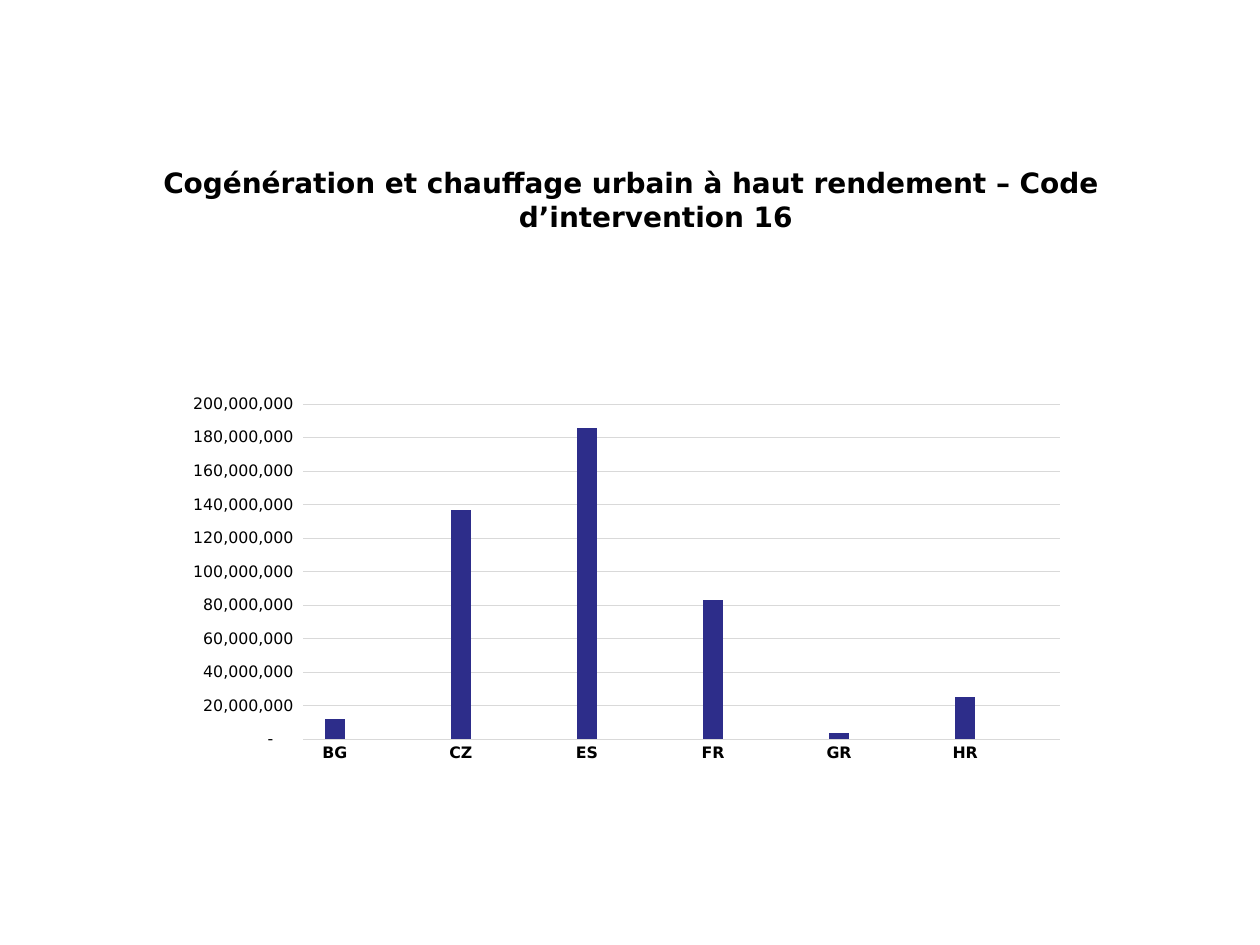
"""Build the slide on cogeneration and district heating funding by country."""
from typing import NamedTuple

import pptx
import pptx.chart.data
import pptx.dml.color
import pptx.enum.chart
import pptx.enum.text
import pptx.oxml
import pptx.oxml.ns
import pptx.util
from pptx.util import Inches

FONT = "DejaVu Sans"
COLOURS = {"text": "000000", "bar": "2D2D8A", "grid": "D9D9D9"}
NUMBER_FORMAT = '_-* #,##0_-;-* #,##0_-;_-* "-"??_-;_-@_-'
PLOT_AREA = {"x": 0.212, "y": 0.181, "w": 0.667, "h": 0.67}


class Allocation(NamedTuple):
    country: str
    amount: int


ALLOCATIONS = [
    Allocation("BG", 12_000_000),
    Allocation("CZ", 137_000_000),
    Allocation("ES", 186_000_000),
    Allocation("FR", 83_000_000),
    Allocation("GR", 4_000_000),
    Allocation("HR", 25_000_000),
]


def colour(name: str) -> pptx.dml.color.RGBColor:
    """Return a palette colour."""
    return pptx.dml.color.RGBColor.from_string(COLOURS[name])


def style_font(font, size: float, bold: bool = False) -> None:
    """Apply the slide's typeface and text colour."""
    font.name = FONT
    font.size = pptx.util.Pt(size)
    font.bold = bold
    font.color.rgb = colour("text")


def style_line(line) -> None:
    """Draw a thin grey chart line."""
    line.color.rgb = colour("grid")
    line.width = pptx.util.Pt(0.75)


def add_title(slide, text: str) -> None:
    """Add the centred title with its hanging indent."""
    shape = slide.shapes.add_textbox(Inches(0.51), Inches(1.07), Inches(9), Inches(1.02))
    text_frame = shape.text_frame
    text_frame.word_wrap = True
    text_frame.vertical_anchor = pptx.enum.text.MSO_ANCHOR.MIDDLE
    text_frame.text = text
    paragraph = text_frame.paragraphs[0]
    paragraph.alignment = pptx.enum.text.PP_ALIGN.CENTER
    properties = paragraph._p.get_or_add_pPr()
    properties.set("marL", str(Inches(0.39)))
    properties.set("indent", str(-Inches(0.39)))
    style_font(paragraph.runs[0].font, 16, bold=True)


def set_plot_area(chart) -> None:
    """Fix the inner plot area as fractions of the chart."""
    positions = "".join(f'<c:{key}Mode val="edge"/>' for key in "xy")
    positions += "".join(f'<c:{key} val="{value}"/>' for key, value in PLOT_AREA.items())
    layout = pptx.oxml.parse_xml(
        f'<c:layout {pptx.oxml.ns.nsdecls("c")}><c:manualLayout>'
        f'<c:layoutTarget val="inner"/>{positions}</c:manualLayout></c:layout>'
    )
    plot_area = chart._chartSpace.chart.plotArea
    for existing in plot_area.findall(pptx.oxml.ns.qn("c:layout")):
        plot_area.remove(existing)
    plot_area.insert(0, layout)


def add_allocation_chart(slide, allocations: list[Allocation]) -> None:
    """Add the column chart, with an empty category after each country."""
    data = pptx.chart.data.CategoryChartData(number_format=NUMBER_FORMAT)
    data.categories = [label for item in allocations for label in (item.country, "")]
    data.add_series("Series 1", [value for item in allocations for value in (item.amount, None)])
    chart = slide.shapes.add_chart(
        pptx.enum.chart.XL_CHART_TYPE.COLUMN_CLUSTERED,
        Inches(0.5), Inches(2.49), Inches(9), Inches(3.97), data,
    ).chart
    chart.has_title = False
    chart.has_legend = False
    style_font(chart.font, 10)
    set_plot_area(chart)

    plot = chart.plots[0]
    plot.vary_by_categories = False
    plot.gap_width = 219
    plot.overlap = -27
    fill = plot.series[0].format.fill
    fill.solid()
    fill.fore_color.rgb = colour("bar")

    category_axis, value_axis = chart.category_axis, chart.value_axis
    for axis in (category_axis, value_axis):
        axis.major_tick_mark = axis.minor_tick_mark = pptx.enum.chart.XL_TICK_MARK.NONE
        style_font(axis.tick_labels.font, 9, bold=axis is category_axis)
    style_line(category_axis.format.line)
    style_line(value_axis.major_gridlines.format.line)
    value_axis.format.line.fill.background()
    value_axis.minimum_scale = 0
    value_axis.maximum_scale = 200_000_000
    value_axis.major_unit = 20_000_000
    value_axis.tick_labels.number_format = NUMBER_FORMAT
    value_axis.tick_labels.number_format_is_linked = False


def main() -> None:
    """Create and save the presentation."""
    presentation = pptx.Presentation()
    presentation.slide_width = Inches(10)
    presentation.slide_height = Inches(7.5)
    slide = presentation.slides.add_slide(presentation.slide_layouts[6])
    add_title(slide, "Cogénération et chauffage urbain à haut rendement – Code d’intervention 16")
    add_allocation_chart(slide, ALLOCATIONS)
    presentation.save("out.pptx")


if __name__ == "__main__":
    main()
